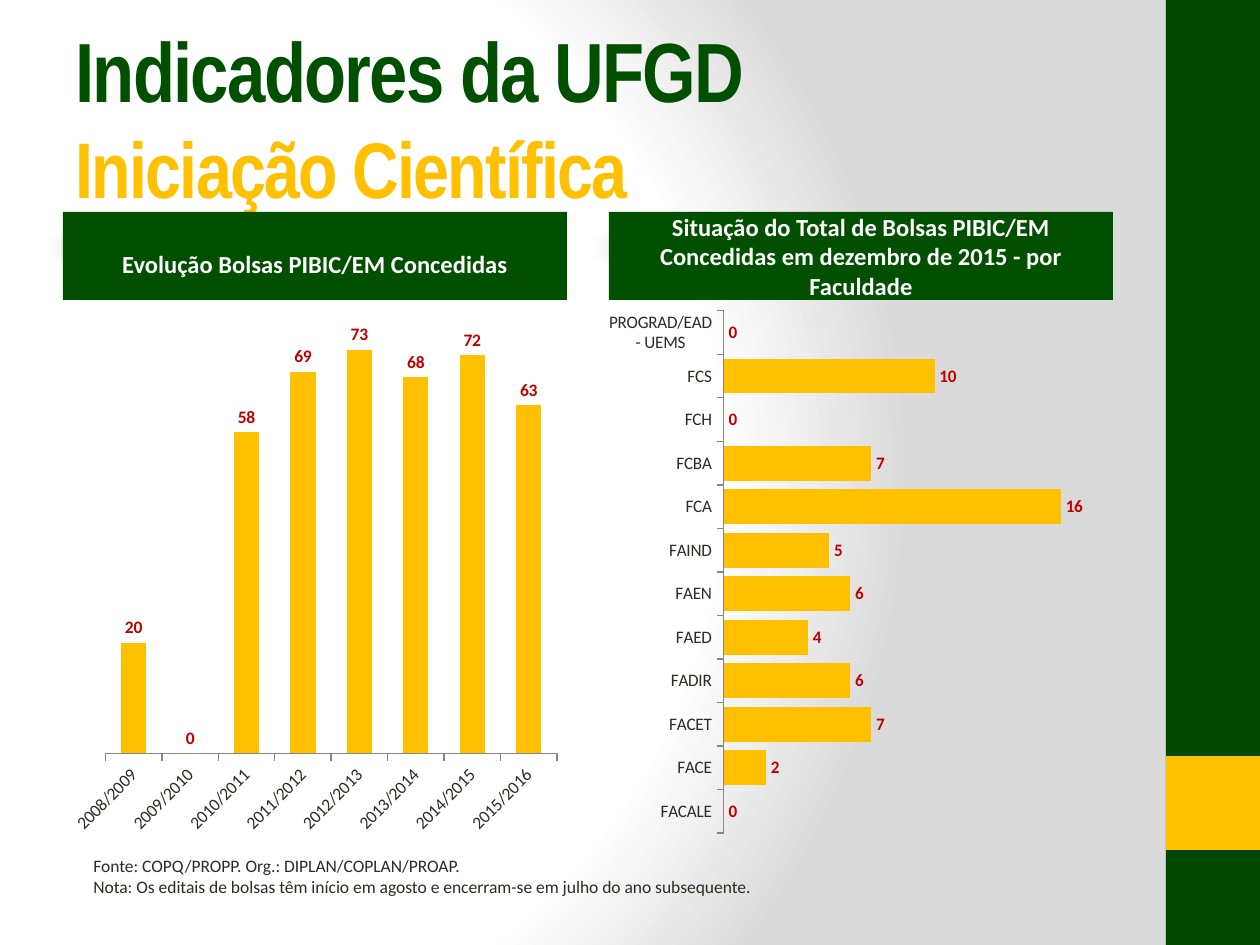
from lxml import etree
from pptx import Presentation
from pptx.chart.data import CategoryChartData
from pptx.dml.color import RGBColor
from pptx.enum.chart import XL_CHART_TYPE, XL_LABEL_POSITION, XL_TICK_MARK
from pptx.enum.shapes import MSO_SHAPE
from pptx.enum.text import MSO_ANCHOR, MSO_AUTO_SIZE, PP_ALIGN
from pptx.oxml import parse_xml
from pptx.oxml.ns import nsdecls, qn
from pptx.util import Pt

EMU_PER_PX = 914400 / 126

DARK_GREEN = RGBColor(0x00, 0x48, 0x00)
GREEN = RGBColor(0x00, 0x50, 0x00)
GOLD = RGBColor(0xFF, 0xC0, 0x00)
RED = RGBColor(0xC0, 0x00, 0x00)
INK = RGBColor(0x2F, 0x2B, 0x20)
AXIS_GRAY = RGBColor(0x86, 0x86, 0x86)
WHITE = RGBColor(0xFF, 0xFF, 0xFF)

COLUMN_LEFTS = (63, 609)
COLUMN_WIDTH = 504

GRANTS_BY_YEAR = {
    "2008/2009": 20, "2009/2010": 0, "2010/2011": 58, "2011/2012": 69,
    "2012/2013": 73, "2013/2014": 68, "2014/2015": 72, "2015/2016": 63,
}
GRANTS_BY_FACULTY = {
    "FACALE": 0, "FACE": 2, "FACET": 7, "FADIR": 6, "FAED": 4, "FAEN": 6,
    "FAIND": 5, "FCA": 16, "FCBA": 7, "FCH": 0, "FCS": 10,
    "PROGRAD/EAD - UEMS": 0,
}


def px(length):
    return round(length * EMU_PER_PX)


def place(*lengths):
    return [px(length) for length in lengths]


def set_format(target, values):
    for name, value in values.items():
        setattr(target, name, value)


def set_font(font, color, **values):
    set_format(font, values)
    font.color.rgb = color


def set_background(slide):
    """Fill the background with a circular white to gray gradient."""
    fill = slide.background.fill
    fill.solid()
    stops = "".join(
        f'<a:gs pos="{position}000"><a:srgbClr val="{color}"/></a:gs>'
        for position, color in ((0, "FFFFFF"), (75, "FFFFFF"), (100, "DADADA"))
    )
    gradient = parse_xml(
        f'<a:gradFill {nsdecls("a")} rotWithShape="1"><a:gsLst>{stops}</a:gsLst>'
        '<a:path path="circle"><a:fillToRect l="20000" t="50000" r="100000" '
        'b="50000"/></a:path></a:gradFill>'
    )
    properties = slide.background._cSld.bg.bgPr
    properties.replace(properties.find(qn("a:solidFill")), gradient)


def add_block(slide, bounds, color):
    block = slide.shapes.add_shape(MSO_SHAPE.RECTANGLE, *place(*bounds))
    block.shadow.inherit = False
    block.fill.solid()
    block.fill.fore_color.rgb = color
    block.line.fill.background()
    return block


def add_perspective_shadow(shape):
    effects = shape._element.spPr.find(qn("a:effectLst"))
    shadow = etree.SubElement(
        effects, qn("a:outerShdw"), blurRad=str(Pt(12)), dist=str(Pt(25)),
        dir="5400000", sx="90000", sy="-19000", algn="tl", rotWithShape="0")
    color = etree.SubElement(shadow, qn("a:srgbClr"), val="000000")
    etree.SubElement(color, qn("a:alpha"), val="15000")


def add_heading(slide, left, text, anchor, bottom_margin):
    box = add_block(slide, (left, 212, COLUMN_WIDTH, 88), GREEN)
    add_perspective_shadow(box)
    set_format(box.text_frame, {
        "word_wrap": True, "vertical_anchor": anchor, "margin_top": px(6),
        "margin_bottom": px(bottom_margin),
    })
    para = box.text_frame.paragraphs[0]
    para.alignment = PP_ALIGN.CENTER
    span = para.add_run()
    span.text = text
    set_font(span.font, WHITE, name="Calibri", size=Pt(14), bold=True)


def format_title(title):
    set_format(title, dict(zip(("left", "top", "width", "height"),
                               place(63, 38, 1050, 157))))
    set_format(title.text_frame, {
        "word_wrap": True, "auto_size": MSO_AUTO_SIZE.NONE,
        "vertical_anchor": MSO_ANCHOR.MIDDLE,
    })
    para = title.text_frame.paragraphs[0]
    para.alignment = PP_ALIGN.LEFT
    lines = (("Indicadores da UFGD", 48, GREEN),
             ("Iniciação Científica", 45, GOLD))
    for index, (text, size, color) in enumerate(lines):
        if index:
            para.add_line_break()
        span = para.add_run()
        span.text = text
        set_font(span.font, color, name="Arial Narrow", size=Pt(size), bold=True)
        span.font._element.set("spc", "-100")


def add_notes_line(slide, lines):
    box = slide.shapes.add_textbox(*place(81, 849, 1056, 55))
    frame = box.text_frame
    frame.word_wrap = True
    for index, text in enumerate(lines):
        para = frame.add_paragraph() if index else frame.paragraphs[0]
        span = para.add_run()
        span.text = text
        set_font(span.font, INK, name="Calibri", size=Pt(10))


def add_grants_chart(slide, left, kind, values, gap, maximum):
    data = CategoryChartData()
    data.categories = list(values)
    data.add_series("Bolsas", list(values.values()))
    chart = slide.shapes.add_chart(
        kind, *place(left, 300, COLUMN_WIDTH, 544), data).chart
    set_format(chart, {"has_title": False, "has_legend": False})
    set_font(chart.font, INK, name="Calibri", size=Pt(10))

    set_format(chart.value_axis, {
        "visible": False, "has_major_gridlines": False,
        "minimum_scale": 0, "maximum_scale": maximum,
    })
    axis = chart.category_axis
    set_format(axis, {"has_major_gridlines": False,
                      "major_tick_mark": XL_TICK_MARK.OUTSIDE})
    axis.format.line.color.rgb = AXIS_GRAY
    set_font(axis.tick_labels.font, INK, name="Calibri", size=Pt(10))

    plot = chart.plots[0]
    set_format(plot, {"gap_width": gap, "vary_by_categories": False})
    series = plot.series[0]
    series.format.fill.solid()
    series.format.fill.fore_color.rgb = GOLD
    labels = series.data_labels
    set_format(labels, {"show_value": True,
                        "position": XL_LABEL_POSITION.OUTSIDE_END})
    set_font(labels.font, RED, name="Calibri", size=Pt(10), bold=True)


def main():
    deck = Presentation()
    set_format(deck, {"slide_width": px(1260), "slide_height": px(945)})
    slide = deck.slides.add_slide(deck.slide_layouts[5])
    set_background(slide)
    add_block(slide, (1166, 0, 94, 945), DARK_GREEN)
    add_block(slide, (1166, 756, 94, 94), GOLD)
    format_title(slide.shapes.title)

    left, right = COLUMN_LEFTS
    add_heading(slide, left, "Evolução Bolsas PIBIC/EM Concedidas",
                MSO_ANCHOR.BOTTOM, 22)
    add_heading(slide, right,
                "Situação do Total de Bolsas PIBIC/EM Concedidas em dezembro "
                "de 2015 - por Faculdade", MSO_ANCHOR.MIDDLE, 6)
    add_notes_line(slide, (
        "Fonte: COPQ/PROPP. Org.: DIPLAN/COPLAN/PROAP.",
        "Nota: Os editais de bolsas têm início em agosto e encerram-se em "
        "julho do ano subsequente.",
    ))
    add_grants_chart(slide, left, XL_CHART_TYPE.COLUMN_CLUSTERED,
                     GRANTS_BY_YEAR, 123, 80)
    add_grants_chart(slide, right, XL_CHART_TYPE.BAR_CLUSTERED,
                     GRANTS_BY_FACULTY, 25, 18)
    deck.save("out.pptx")


if __name__ == "__main__":
    main()
